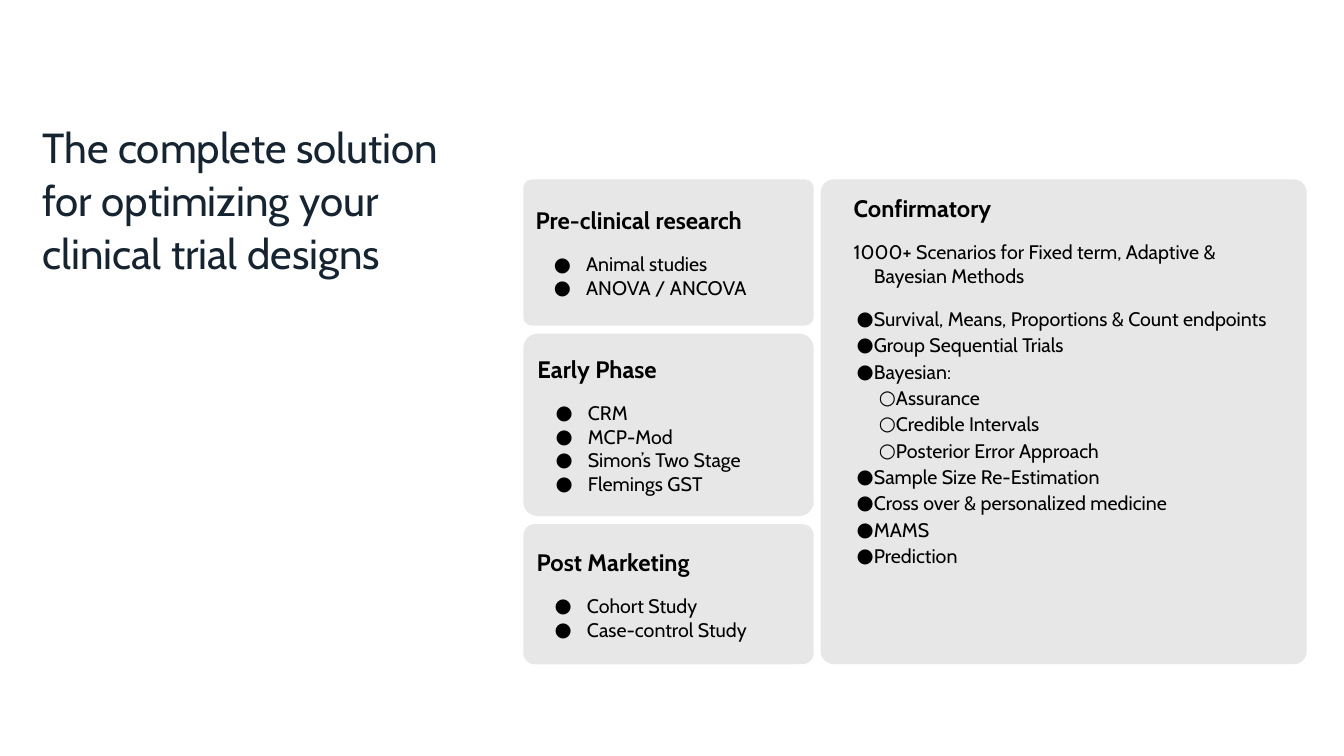
from dataclasses import dataclass

from lxml.etree import SubElement
from pptx import Presentation
from pptx.dml.color import RGBColor
from pptx.enum.shapes import MSO_SHAPE as Shape
from pptx.enum.text import MSO_ANCHOR as Anchor, MSO_AUTO_SIZE as AutoSize, PP_ALIGN as Align
from pptx.oxml.ns import qn
from pptx.util import Inches, Pt


@dataclass(frozen=True)
class Theme:
    font: str = "Cabin"
    title_color: str = "152430"
    text_color: str = "000000"
    card_color: str = "E7E7E7"
    title_size: int = 30
    heading_size: int = 17
    body_size: int = 14
    heading_gap: int = 13
    inset: float = 0.1


@dataclass(frozen=True)
class Line:
    """Indents in inches, space before in points."""
    margin: float = 0
    indent: float = 0
    before: float = 0
    bullet: str = ""
    level: int = 0


def set_all(target, values):
    for name, value in values.items():
        setattr(target, name, value)


class SlideBuilder:
    def __init__(self, slide, theme):
        self.slide = slide
        self.theme = theme

    def prepare_frame(self, frame, anchor):
        sides = ("left", "top", "right", "bottom")
        margins = {f"margin_{side}": Inches(self.theme.inset) for side in sides}
        set_all(frame, {"word_wrap": True, "auto_size": AutoSize.NONE,
                        "vertical_anchor": anchor, **margins})

    def add_text(self, paragraph, text, size, color, bold=False):
        run = paragraph.add_run()
        run.text = text
        set_all(run.font, {"name": self.theme.font, "size": Pt(size), "bold": bold})
        run.font.color.rgb = RGBColor.from_string(color)

    def title(self, text, left, top, width, height):
        title = self.slide.shapes.title
        set_all(title, {"left": Inches(left), "top": Inches(top),
                        "width": Inches(width), "height": Inches(height)})
        self.prepare_frame(title.text_frame, Anchor.TOP)
        paragraph = title.text_frame.paragraphs[0]
        set_all(paragraph, {"alignment": Align.LEFT, "line_spacing": 1.05})
        self.add_text(paragraph, text, self.theme.title_size, self.theme.title_color)

    def format_line(self, paragraph, line):
        set_all(paragraph, {"alignment": Align.LEFT, "level": line.level,
                            "space_before": Pt(line.before)})
        properties = paragraph._p.get_or_add_pPr()
        properties.set("marL", str(Inches(line.margin)))
        properties.set("indent", str(Inches(line.indent)))
        if line.bullet:
            color = SubElement(properties, qn("a:buClr"))
            SubElement(color, qn("a:srgbClr"), val=self.theme.text_color)
            SubElement(properties, qn("a:buFont"), typeface=self.theme.font)
            SubElement(properties, qn("a:buChar"), char=line.bullet)

    def card(self, box, radius, heading, lines, heading_line=Line(), anchor=Anchor.MIDDLE):
        theme = self.theme
        shape = self.slide.shapes.add_shape(Shape.ROUNDED_RECTANGLE, *map(Inches, box))
        shape.adjustments[0] = radius
        shape.shadow.inherit = False
        shape.fill.solid()
        shape.fill.fore_color.rgb = RGBColor.from_string(theme.card_color)
        shape.line.fill.background()
        frame = shape.text_frame
        self.prepare_frame(frame, anchor)

        paragraph = frame.paragraphs[0]
        self.format_line(paragraph, heading_line)
        self.add_text(paragraph, heading, theme.heading_size, theme.text_color, bold=True)
        for text, line in lines:
            paragraph = frame.add_paragraph()
            self.format_line(paragraph, line)
            self.add_text(paragraph, text, theme.body_size, theme.text_color)


def main():
    presentation = Presentation()
    set_all(presentation, {"slide_width": Inches(13.33), "slide_height": Inches(7.5)})
    slide = presentation.slides.add_slide(presentation.slide_layouts[5])
    theme = Theme()
    builder = SlideBuilder(slide, theme)

    builder.title("The complete solution for optimizing your clinical trial designs",
                  0.32, 1.08, 4.53, 1.93)

    # Phase cards, stacked in the left column
    left, top, width, gap = 5.19, 1.78, 2.88, 0.08
    phases = [
        ("Pre-clinical research", 1.45, 0.058, ["Animal studies", "ANOVA / ANCOVA"]),
        ("Early Phase", 1.81, 0.079,
         ["CRM", "MCP-Mod", "Simon’s Two Stage", "Flemings GST"]),
        ("Post Marketing", 1.39, 0.081, ["Cohort Study", "Case-control Study"]),
    ]
    card_top = top
    for heading, height, radius, items in phases:
        lines = [(item, Line(0.5, -0.32, 0 if index else theme.heading_gap, "●"))
                 for index, item in enumerate(items)]
        builder.card((left, card_top, width, height), radius, heading, lines)
        card_top += height + gap

    # Confirmatory card, as tall as the column
    plain = Line(0.39, -0.2)
    intro = Line(0.39, -0.2, theme.heading_gap)
    first = Line(0.39, -0.17, theme.heading_gap + 1, "●")
    item = Line(0.39, -0.17, 2, "●")
    sub_item = Line(0.59, -0.15, 2, "○", 1)
    methods = [
        ("1000+ Scenarios for Fixed term, Adaptive & Bayesian Methods", intro),
        ("Survival, Means, Proportions & Count endpoints", first),
        ("Group Sequential Trials", item),
        ("Bayesian:", item),
        ("Assurance", sub_item),
        ("Credible Intervals", sub_item),
        ("Posterior Error Approach", sub_item),
        ("Sample Size Re-Estimation", item),
        ("Cross over & personalized medicine", item),
        ("MAMS", item),
        ("Prediction", item),
    ]
    builder.card((8.14, top, 4.82, card_top - gap - top), 0.027, "Confirmatory", methods,
                 heading_line=plain, anchor=Anchor.TOP)

    presentation.save("out.pptx")


if __name__ == "__main__":
    main()
